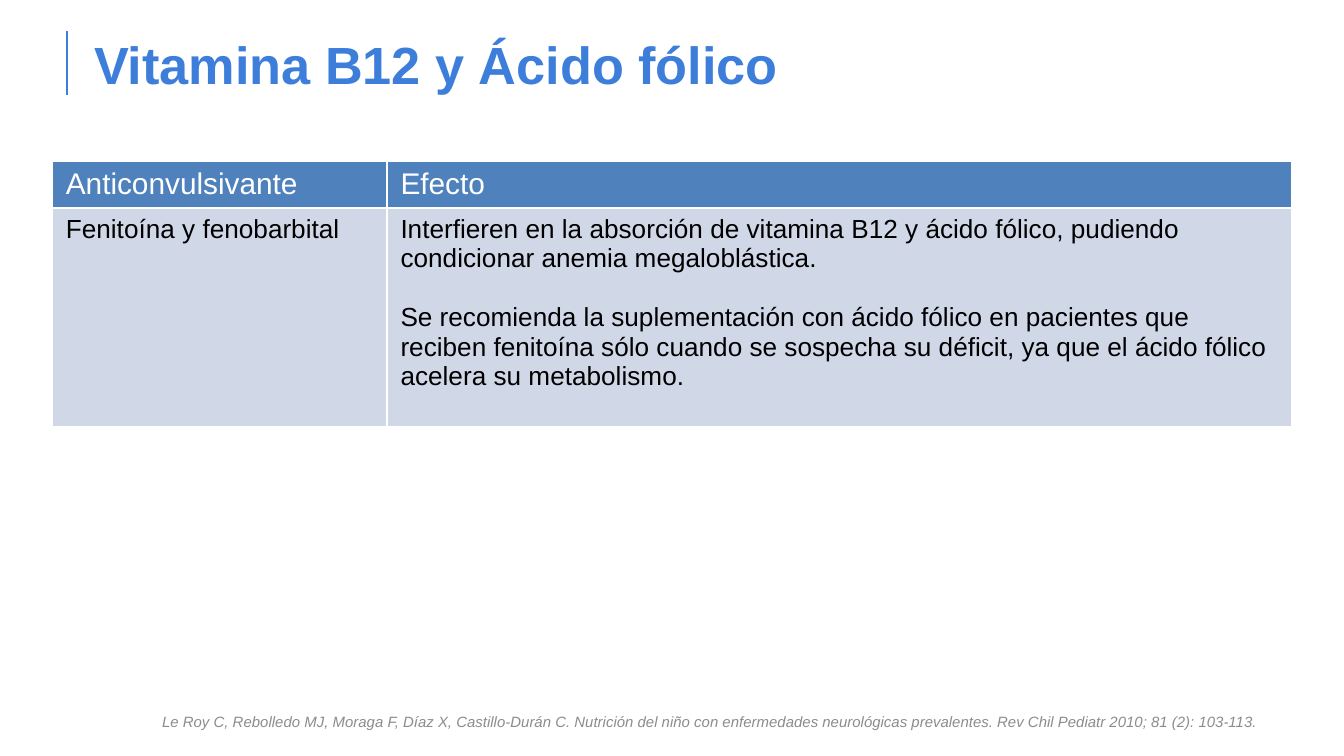
"""Build a slide on anticonvulsants, vitamin B12 and folic acid."""
from dataclasses import dataclass

from lxml import etree
from pptx import Presentation
from pptx.dml.color import RGBColor
from pptx.enum.shapes import MSO_CONNECTOR
from pptx.enum.text import MSO_ANCHOR, MSO_AUTO_SIZE, PP_ALIGN
from pptx.oxml.ns import qn
from pptx.util import Inches, Pt

STRAIGHT = MSO_CONNECTOR.STRAIGHT
MIDDLE = MSO_ANCHOR.MIDDLE
NO_AUTOFIT = MSO_AUTO_SIZE.NONE
LEFT, RIGHT = PP_ALIGN.LEFT, PP_ALIGN.RIGHT
FONT = "Arial"
COLORS = {
    "accent": "3D7EDB",
    "citation": "8C8C8C",
    "header": "4F81BD",
    "body": "D0D8E8",
    "white": "FFFFFF",
    "black": "000000",
}


@dataclass
class TextStyle:
    """Character format and alignment of a text."""
    size: float
    color: str
    bold: bool = False
    italic: bool = False
    align: PP_ALIGN = LEFT


@dataclass
class TableRow:
    """One table row with its look."""
    cells: list[str]
    height: float
    fill: str
    style: TextStyle


TITLE = TextStyle(28, "accent", bold=True)
CITATION = TextStyle(8, "citation", italic=True, align=RIGHT)
COLUMNS = [2.49, 6.73]
ROWS = [
    TableRow(["Anticonvulsivante", "Efecto"], 0.34, "header", TextStyle(16, "white")),
    TableRow(
        [
            "Fenitoína y fenobarbital",
            "Interfieren en la absorción de vitamina B12 y ácido fólico, pudiendo "
            "condicionar anemia megaloblástica.\n"
            "Se recomienda la suplementación con ácido fólico en pacientes que reciben "
            "fenitoína sólo cuando se sospecha su déficit, ya que el ácido fólico "
            "acelera su metabolismo.",
        ],
        1.63, "body", TextStyle(14, "black"),
    ),
]


def rgb(name: str) -> RGBColor:
    """Return a named colour."""
    return RGBColor.from_string(COLORS[name])


def write(tf, text: str, style: TextStyle) -> None:
    """Set text, leaving one line of space between paragraphs."""
    tf.text = text
    for i, p in enumerate(tf.paragraphs):
        p.alignment = style.align
        if i:
            p.space_before = Pt(style.size * 1.13)
        for r in p.runs:
            r.font.name = FONT
            r.font.size = Pt(style.size)
            r.font.bold = style.bold
            r.font.italic = style.italic
            r.font.color.rgb = rgb(style.color)


def write_box(sp, text: str, style: TextStyle, left_inset: float) -> None:
    """Fill a vertically centred text shape."""
    tf = sp.text_frame
    tf.word_wrap = True
    tf.auto_size = NO_AUTOFIT
    tf.vertical_anchor = MIDDLE
    tf.margin_left, tf.margin_right = Inches(left_inset), Inches(0.1)
    tf.margin_top = tf.margin_bottom = Inches(0.12)
    write(tf, text, style)


def set_borders(cell) -> None:
    """Draw thin white borders around a cell."""
    tc_pr = cell._tc.get_or_add_tcPr()
    for tag in ("a:lnL", "a:lnR", "a:lnT", "a:lnB"):
        ln = etree.SubElement(tc_pr, qn(tag), w=str(Pt(1)))
        fill = etree.SubElement(ln, qn("a:solidFill"))
        etree.SubElement(fill, qn("a:srgbClr"), val=COLORS["white"])


def add_effects_table(s) -> None:
    """Add the table of drugs and their effects."""
    table = s.shapes.add_table(
        len(ROWS), len(COLUMNS), Inches(0.39), Inches(1.2),
        Inches(sum(COLUMNS)), Inches(sum(row.height for row in ROWS)),
    ).table
    for column, width in zip(table.columns, COLUMNS):
        column.width = Inches(width)
    for i, row in enumerate(ROWS):
        table.rows[i].height = Inches(row.height)
        for j, text in enumerate(row.cells):
            cell = table.cell(i, j)
            set_borders(cell)
            cell.fill.solid()
            cell.fill.fore_color.rgb = rgb(row.fill)
            write(cell.text_frame, text, row.style)


def add_title_rule(s) -> None:
    """Add the vertical line beside the title."""
    rule = s.shapes.add_connector(
        STRAIGHT, Inches(0.5), Inches(0.23), Inches(0.5), Inches(0.71)
    )
    rule.line.color.rgb = rgb("accent")
    rule.line.width = Pt(1)
    etree.SubElement(rule._element.spPr, qn("a:effectLst"))


def main() -> None:
    """Build and save the presentation."""
    prs = Presentation()
    prs.slide_width = Inches(10)
    prs.slide_height = prs.slide_width * 9 // 16
    s = prs.slides.add_slide(prs.slide_layouts[5])
    add_title_rule(s)
    title = s.shapes.title
    title.left, title.top = Inches(0.5), Inches(0.23)
    title.width, title.height = Inches(9), Inches(0.49)
    write_box(title, "Vitamina B12 y Ácido fólico", TITLE, 0.2)
    citation = s.shapes.add_textbox(Inches(0.5), Inches(5.22), Inches(9), Inches(0.3))
    write_box(
        citation,
        "Le Roy C, Rebolledo MJ, Moraga F, Díaz X, Castillo-Durán C. Nutrición del niño "
        "con enfermedades neurológicas prevalentes. Rev Chil Pediatr 2010; 81 (2): 103-113. ",
        CITATION, 0.1,
    )
    add_effects_table(s)
    prs.save("out.pptx")


if __name__ == "__main__":
    main()
